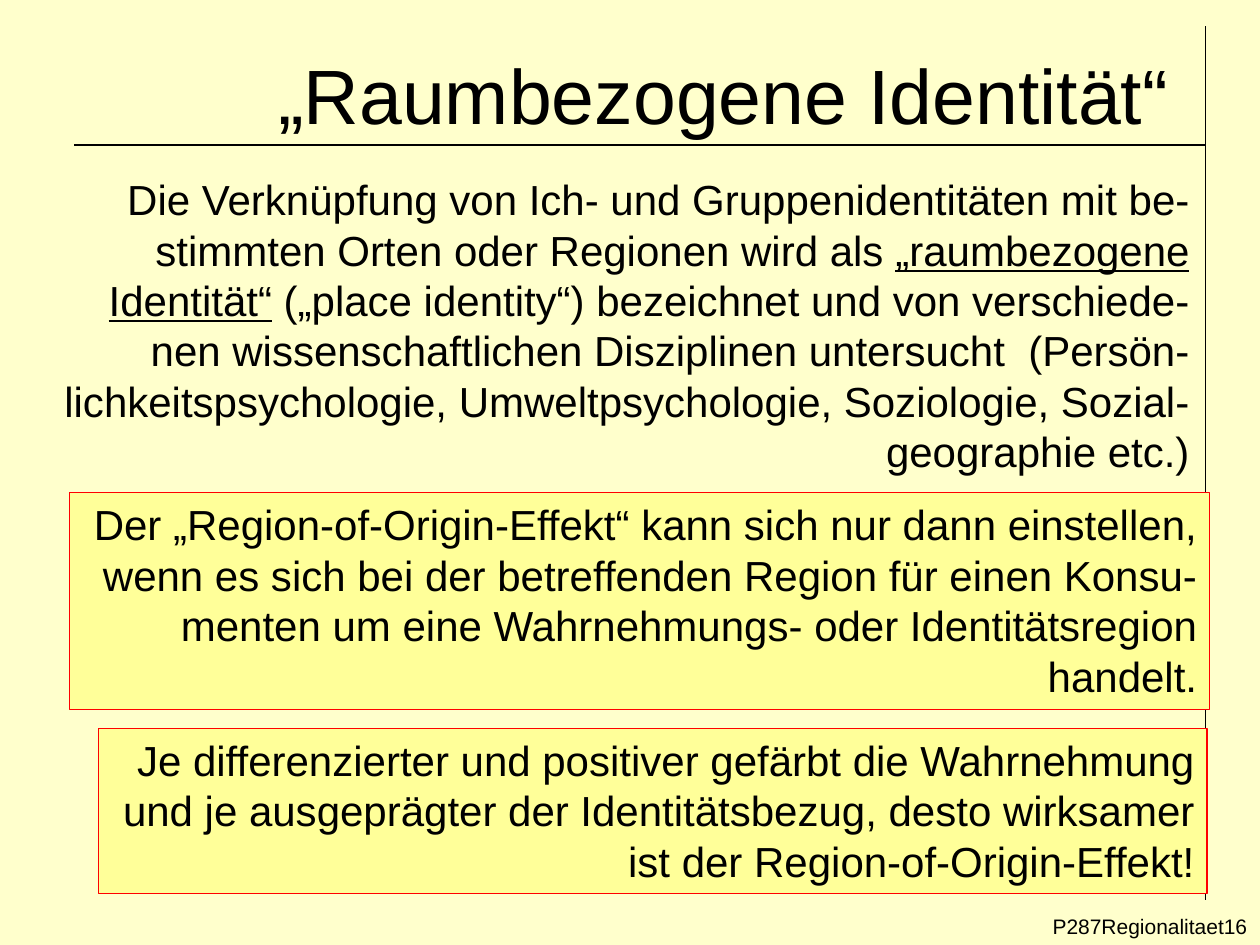
from dataclasses import dataclass

from lxml import etree
from pptx import Presentation
from pptx.dml.color import RGBColor
from pptx.enum.shapes import MSO_CONNECTOR, MSO_SHAPE
from pptx.enum.text import MSO_ANCHOR, MSO_AUTO_SIZE, PP_ALIGN
from pptx.oxml.ns import qn
from pptx.util import Inches, Pt

RIGHT = PP_ALIGN.RIGHT
TOP, MIDDLE = MSO_ANCHOR.TOP, MSO_ANCHOR.MIDDLE
FIXED, GROW = MSO_AUTO_SIZE.NONE, MSO_AUTO_SIZE.SHAPE_TO_FIT_TEXT
RECTANGLE = MSO_SHAPE.RECTANGLE
STRAIGHT = MSO_CONNECTOR.STRAIGHT
TITLE_ONLY = 5


@dataclass(frozen=True)
class Theme:
    font: str = "Arial"
    background: RGBColor = RGBColor(0xFF, 0xFF, 0xCC)
    ink: RGBColor = RGBColor(0, 0, 0)
    panel: RGBColor = RGBColor(0xFF, 0xFF, 0x99)
    panel_border: RGBColor = RGBColor(0xFF, 0, 0)
    title_size: int = 44
    body_size: int = 24
    footer_size: int = 12
    line_width: float = 0.75


TITLE = "„Raumbezogene Identität“ "
FOOTER = "P287Regionalitaet16"
DEFINITION = [
    "Die Verknüpfung von Ich- und Gruppenidentitäten mit be-",
    "stimmten Orten oder Regionen wird als _„raumbezogene_",
    "_Identität“_ („place identity“) bezeichnet und von verschiede-",
    "nen wissenschaftlichen Disziplinen untersucht  (Persön-",
    "lichkeitspsychologie, Umweltpsychologie, Soziologie, Sozial-",
    "geographie etc.)",
]
CONDITION = [
    "Der „Region-of-Origin-Effekt“ kann sich nur dann einstellen,",
    "wenn es sich bei der betreffenden Region für einen Konsu-",
    "menten um eine Wahrnehmungs- oder Identitätsregion",
    "handelt.",
]
CONCLUSION = [
    "Je differenzierter und positiver gefärbt die Wahrnehmung",
    "und je ausgeprägter der Identitätsbezug, desto wirksamer",
    "ist der Region-of-Origin-Effekt!",
]


def write_text(frame, lines, *, theme, size, anchor=TOP, wrap=False, fit=GROW):
    """Write one right-aligned paragraph per line; _marked_ parts are underlined."""
    frame.word_wrap = wrap
    frame.auto_size = fit
    frame.vertical_anchor = anchor
    for index, line in enumerate(lines):
        paragraph = frame.paragraphs[0] if index == 0 else frame.add_paragraph()
        paragraph.alignment = RIGHT
        for part, text in enumerate(line.split("_")):
            if not text:
                continue
            run = paragraph.add_run()
            run.text = text
            run.font.name = theme.font
            run.font.size = Pt(size)
            run.font.color.rgb = theme.ink
            if part % 2:
                run.font.underline = True


class SlideBuilder:
    def __init__(self, slide, theme):
        self.slide = slide
        self.theme = theme
        slide.background.fill.solid()
        slide.background.fill.fore_color.rgb = theme.background

    def title(self, text, left, top, width, height):
        heading = self.slide.shapes.title
        heading.left, heading.top = Inches(left), Inches(top)
        heading.width, heading.height = Inches(width), Inches(height)
        write_text(heading.text_frame, [text], theme=self.theme,
                   size=self.theme.title_size, anchor=MIDDLE, wrap=True, fit=FIXED)

    def rule(self, *ends):
        rule = self.slide.shapes.add_connector(STRAIGHT, *map(Inches, ends))
        rule.line.color.rgb = self.theme.ink
        rule.line.width = Pt(self.theme.line_width)
        etree.SubElement(rule.element.spPr, qn("a:effectLst"))

    def text(self, lines, size, *box):
        block = self.slide.shapes.add_textbox(*map(Inches, box))
        write_text(block.text_frame, lines, theme=self.theme, size=size)

    def panel(self, lines, *box):
        panel = self.slide.shapes.add_shape(RECTANGLE, *map(Inches, box))
        panel.shadow.inherit = False
        panel.fill.solid()
        panel.fill.fore_color.rgb = self.theme.panel
        panel.line.color.rgb = self.theme.panel_border
        panel.line.width = Pt(self.theme.line_width)
        write_text(panel.text_frame, lines, theme=self.theme, size=self.theme.body_size)


def main():
    presentation = Presentation()
    presentation.slide_width, presentation.slide_height = Inches(10), Inches(7.5)
    theme = Theme()
    slide = presentation.slides.add_slide(presentation.slide_layouts[TITLE_ONLY])
    builder = SlideBuilder(slide, theme)

    margin_x, title_rule_y = 9.57, 1.15
    builder.title(TITLE, 0.55, 0.39, 9, 0.7)
    builder.rule(0.59, title_rule_y, margin_x, title_rule_y)
    builder.rule(margin_x, 0.21, margin_x, 7.14)
    builder.text([FOOTER], theme.footer_size, 8.24, 7.2, 1.76, 0.3)
    builder.text(DEFINITION, theme.body_size, 0.31, 1.33, 9.23, 2.52)
    builder.panel(CONDITION, 0.55, 3.91, 9.05, 1.72)
    builder.panel(CONCLUSION, 0.78, 5.78, 8.8, 1.31)

    presentation.save("out.pptx")


if __name__ == "__main__":
    main()
